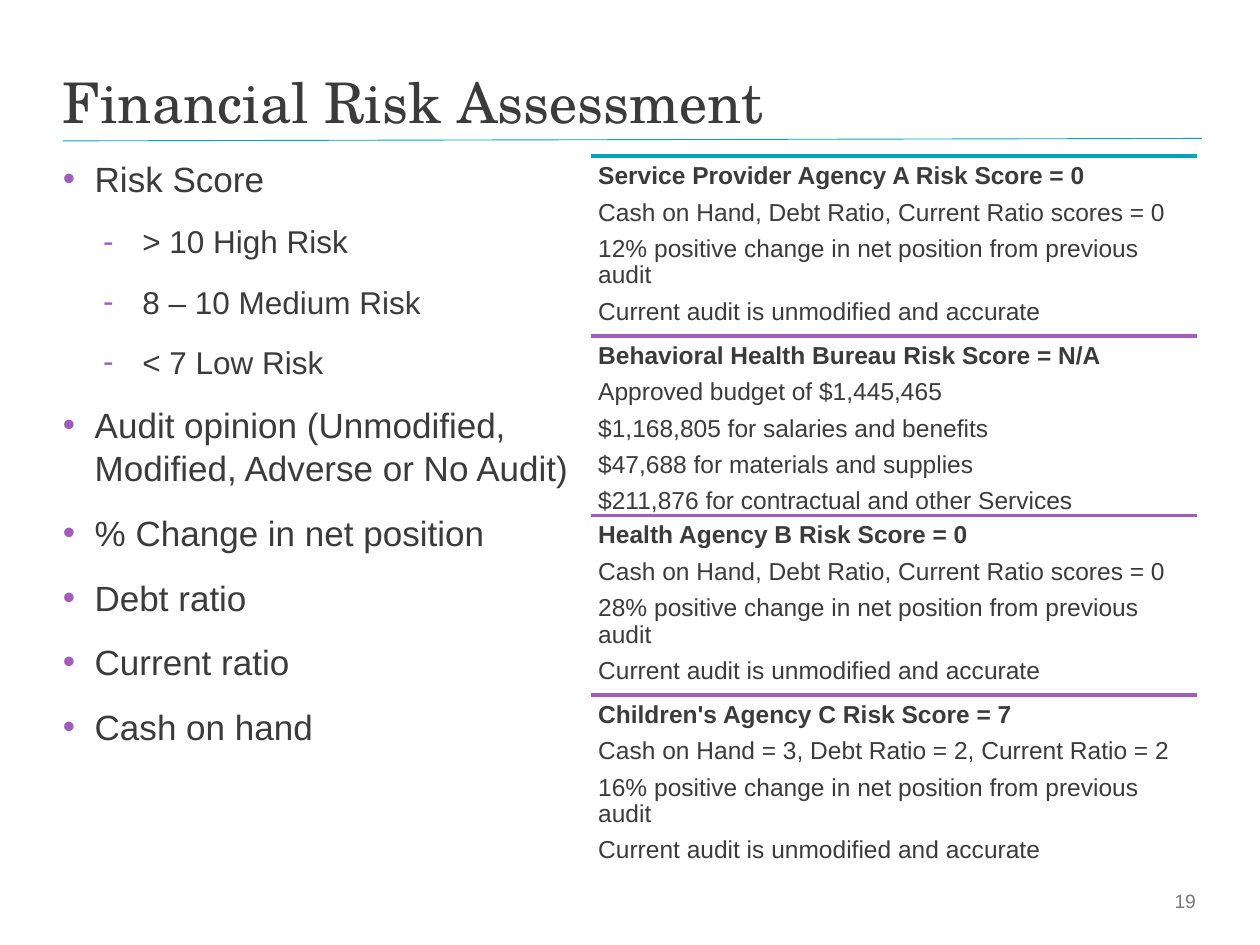
"""Build the Financial Risk Assessment slide."""
from lxml.etree import SubElement
from pptx import Presentation
from pptx.dml.color import RGBColor as RGB
from pptx.enum.shapes import MSO_CONNECTOR as CONN
from pptx.enum.text import MSO_ANCHOR as ANCHOR, PP_ALIGN as ALIGN
from pptx.oxml.ns import qn
from pptx.util import Cm, Pt

COLORS = {"text": "3B3B3B", "teal": "00A5C1", "purple": "A05DBB", "grey": "777877"}

TITLE = "Financial Risk Assessment"
PAGE = "19"
CRITERIA = [
    (0, "Risk Score"),
    (1, "> 10 High Risk"),
    (1, "8 – 10 Medium Risk"),
    (1, "< 7 Low Risk"),
    (0, "Audit opinion (Unmodified, Modified, Adverse or No Audit)"),
    (0, "% Change in net position"),
    (0, "Debt ratio"),
    (0, "Current ratio"),
    (0, "Cash on hand"),
]
AUDIT = "Current audit is unmodified and accurate"
ALL_ZERO = "Cash on Hand, Debt Ratio, Current Ratio scores = 0"
CHANGE = "{}% positive change in net position from previous audit"
AGENCIES = [
    ("Service Provider Agency A Risk Score = 0",
     [ALL_ZERO, CHANGE.format(12), AUDIT]),
    ("Behavioral Health Bureau Risk Score = N/A",
     ["Approved budget of $1,445,465",
      "$1,168,805 for salaries and benefits",
      "$47,688 for materials and supplies",
      "$211,876 for contractual and other Services"]),
    ("Health Agency B Risk Score = 0",
     [ALL_ZERO, CHANGE.format(28), AUDIT]),
    ("Children's Agency C Risk Score = 7",
     ["Cash on Hand = 3, Debt Ratio = 2, Current Ratio = 2",
      CHANGE.format(16), AUDIT]),
]
LEVELS = [
    {"bullet": "•", "size": 20, "left": 0.64, "hang": 0.64},
    {"bullet": "-", "size": 18, "left": 1.6, "hang": 0.79},
]
MARGIN, TOP = 1.27, 3.15
PANEL_X, PANEL_W, PANEL_H = 11.91, 12.22, 3.62


def add_box(s, x, y, w, h, anchor=ANCHOR.TOP, inset=0):
    tf = s.shapes.add_textbox(Cm(x), Cm(y), Cm(w), Cm(h)).text_frame
    tf.word_wrap = True
    tf.vertical_anchor = anchor
    tf.margin_left = tf.margin_right = tf.margin_top = tf.margin_bottom = Cm(inset)
    return tf


def add_text(tf, text, size=14, font="Arial", color="text", bold=False, align=ALIGN.LEFT,
             spacing=None, before=0, after=0, bullet=None, left=0, hang=0):
    first = not tf.text
    p = tf.paragraphs[0] if first else tf.add_paragraph()
    p.alignment = align
    p.line_spacing = spacing
    p.space_before = Pt(0 if first else before)
    p.space_after = Pt(after)
    if bullet:
        pPr = p._p.get_or_add_pPr()
        pPr.set("marL", str(Cm(left)))
        pPr.set("indent", str(-Cm(hang)))
        clr = SubElement(pPr, qn("a:buClr"))
        SubElement(clr, qn("a:srgbClr"), val=COLORS["purple"])
        SubElement(pPr, qn("a:buFont"), typeface=font)
        SubElement(pPr, qn("a:buChar"), char=bullet)
    r = p.add_run()
    r.text = text
    r.font.size, r.font.name, r.font.bold = Pt(size), font, bold
    r.font.color.rgb = RGB.from_string(COLORS[color])


def add_rule(s, x1, y1, x2, y2, color, width):
    line = s.shapes.add_connector(CONN.STRAIGHT, Cm(x1), Cm(y1), Cm(x2), Cm(y2))
    line.line.color.rgb = RGB.from_string(COLORS[color])
    line.line.width = Pt(width)
    SubElement(line._element.spPr, qn("a:effectLst"))


def main():
    prs = Presentation()
    prs.slide_width, prs.slide_height = Cm(25.4), Cm(19.05)
    s = prs.slides.add_slide(prs.slide_layouts[6])

    add_rule(s, MARGIN, 2.84, 24.23, 2.79, "teal", 0.5)
    tf = add_box(s, MARGIN, 0.36, 22.86, 2.36, ANCHOR.BOTTOM)
    add_text(tf, TITLE, size=32, font="TeX Gyre Schola", spacing=Pt(33))

    tf = add_box(s, MARGIN, TOP, 11.23, 13.11)
    for level, text in CRITERIA:
        add_text(tf, text, spacing=1.04, before=12, **LEVELS[level])

    for i, (heading, facts) in enumerate(AGENCIES):
        y = TOP + i * PANEL_H
        add_rule(s, PANEL_X, y, PANEL_X + PANEL_W, y, "purple" if i else "teal", 2)
        tf = add_box(s, PANEL_X, y, PANEL_W, PANEL_H, inset=0.15)
        for text in [heading, *facts]:
            add_text(tf, text, bold=text == heading, spacing=0.9, after=5.6)

    tf = add_box(s, 18.44, 17.65, 5.92, 1.02, ANCHOR.MIDDLE, inset=0.25)
    add_text(tf, PAGE, size=11, color="grey", align=ALIGN.RIGHT, after=6)

    prs.save("out.pptx")


if __name__ == "__main__":
    main()
